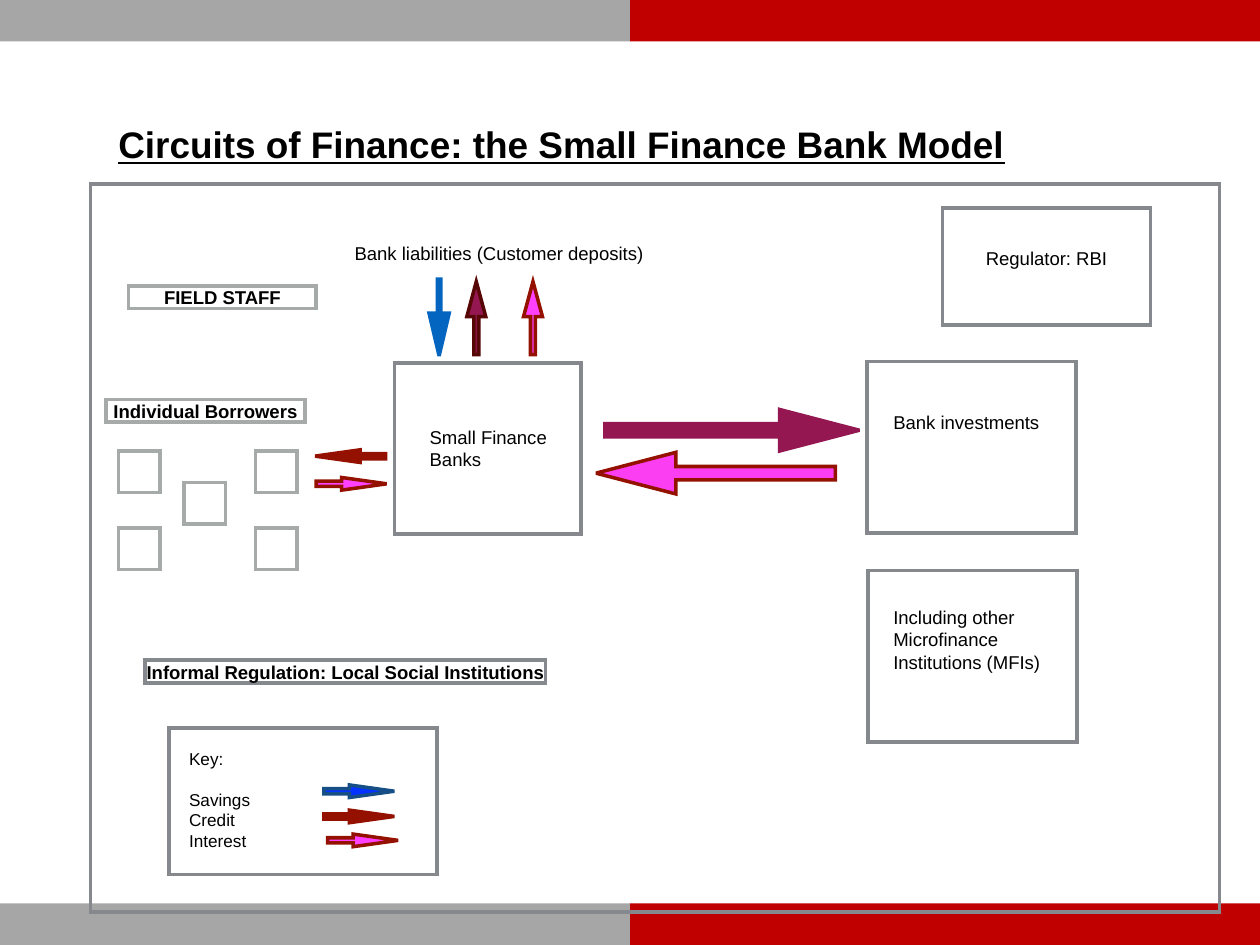
"""Build the Small Finance Bank circuits slide."""
import lxml.etree
import pptx
import pptx.util
import pptx.dml.color
import pptx.enum.shapes
import pptx.enum.text
import pptx.oxml.ns

Inches, Pt = pptx.util.Inches, pptx.util.Pt
KIND = pptx.enum.shapes.MSO_SHAPE
ALIGN = pptx.enum.text.PP_ALIGN
MID = pptx.enum.text.MSO_ANCHOR.MIDDLE
TOP = pptx.enum.text.MSO_ANCHOR.TOP

GREY, PALE, RED = "85888D", "A6AAA9", "C00000"
RUST, PLUM, PINK = "941100", "941751", "FF40FF"

BARS = [(x, y, hue) for y in (0, 7.17) for x, hue in ((5, RED), (0, "A6A6A6"))]

BOXES = [
    (0.72, 1.46, 8.96, 5.78),
    (3.13, 2.88, 1.48, 1.36),
    (6.88, 2.87, 1.66, 1.36),
    (6.89, 4.53, 1.66, 1.36),
    (7.48, 1.65, 1.65, 0.93),
    (1.34, 5.78, 2.13, 1.16),
]

SIDE = 0.33
HOMES = [(x, y) for x in (0.94, 2.03) for y in (3.58, 4.19)] + [(1.46, 3.83)]

LABELS = [
    ("FIELD STAFF", 1.02, 2.27, 1.49, PALE),
    ("Individual Borrowers", 0.84, 3.17, 1.58, PALE),
    ("Informal Regulation: Local Social Institutions", 1.15, 5.24, 3.18, GREY),
]

BODY = {"size": Pt(10.6)}
BOLD = {"size": Pt(10.6), "bold": True}
HEAD = {"size": Pt(21.1), "bold": True, "underline": True}
SMALL = {"size": Pt(9.8)}

TEXTS = [
    (["Circuits of Finance: the Small Finance Bank Model"],
     (0.76, 0.93, 7.4, 0.43), ALIGN.CENTER, MID, HEAD),
    (["Bank liabilities (Customer deposits)"],
     (2.71, 1.88, 2.5, 0.26), ALIGN.CENTER, MID, BODY),
    (["Regulator: RBI"], (7.47, 1.92, 1.67, 0.26), ALIGN.CENTER, MID, BODY),
    (["Small Finance Banks"], (3.37, 3.34, 1.19, 0.43), ALIGN.LEFT, MID, BODY),
    (["Bank investments"], (7.05, 3.22, 1.35, 0.25), ALIGN.LEFT, TOP, BODY),
    (["Including other Microfinance Institutions (MFIs)"],
     (7.05, 4.77, 1.44, 0.61), ALIGN.LEFT, MID, BODY),
    (["Key:", "Savings", "Credit", "Interest"],
     (1.46, 5.89, 1.49, 0.91), ALIGN.LEFT, MID, SMALL),
]

THIN, RISE, WIDE = (0.41, 3.57), (0.26, 1.85), (0.32, 1.92)
ARROWS = [
    ((3.18, 2.44, 0.61, 0.16), 90, (0.17, 2.12), "0365C0", "0365C0"),
    ((3.49, 2.45, 0.58, 0.15), 270, RISE, PLUM, "570706"),
    ((3.94, 2.45, 0.58, 0.15), 270, RISE, PINK, RUST),
    ((4.8, 3.25, 2.02, 0.33), 0, WIDE, PLUM, PLUM),
    ((4.73, 3.59, 1.9, 0.33), 180, WIDE, "FC3EF3", RUST),
    ((2.5, 3.57, 0.56, 0.1), 180, THIN, RUST, RUST),
    ((2.51, 3.79, 0.56, 0.1), 0, THIN, PINK, RUST),
    ((2.57, 6.23, 0.56, 0.1), 0, THIN, "0433FF", "164F86"),
    ((2.57, 6.43, 0.56, 0.1), 0, THIN, RUST, RUST),
    ((2.6, 6.62, 0.56, 0.1), 0, THIN, PINK, RUST),
]


def color(code):
    return pptx.dml.color.RGBColor.from_string(code)


def place(spot):
    return [Inches(v) for v in spot]


def draw(slide, spot, fill=None, line=None, kind=KIND.RECTANGLE):
    shape = slide.shapes.add_shape(kind, *place(spot))
    shape.shadow.inherit = False
    if fill:
        shape.fill.solid()
        shape.fill.fore_color.rgb = color(fill)
    else:
        shape.fill.background()
    if line:
        shape.line.color.rgb = color(line)
        shape.line.width = Pt(2)
        edge = shape.element.spPr.find(pptx.oxml.ns.qn("a:ln"))
        lxml.etree.SubElement(edge, pptx.oxml.ns.qn("a:miter"), lim="400000")
    else:
        shape.line.fill.background()
    return shape


def write(shape, lines, align, anchor, style, inset=0.04):
    frame = shape.text_frame
    frame.word_wrap = align != ALIGN.CENTER
    frame.vertical_anchor = anchor
    for side in ("left", "top", "right", "bottom"):
        setattr(frame, "margin_" + side, Inches(inset))
    frame.text = "\n".join(lines)
    for para in frame.paragraphs:
        para.alignment = align
        for name, value in {"name": "Arial", **style}.items():
            setattr(para.font, name, value)
        para.font.color.rgb = color("000000")
    if len(lines) > 1:
        frame.paragraphs[0].space_after = Pt(11.5)


def main():
    deck = pptx.Presentation()
    deck.slide_width, deck.slide_height = Inches(10), Inches(7.5)
    slide = deck.slides.add_slide(deck.slide_layouts[6])
    for x, y, hue in BARS:
        draw(slide, (x, y, 5, 0.33), fill=hue)
    for spot in BOXES:
        draw(slide, spot, line=GREY)
    for x, y in HOMES:
        draw(slide, (x, y, SIDE, SIDE), line=PALE)
    for text, x, y, width, hue in LABELS:
        box = draw(slide, (x, y, width, 0.18), line=hue)
        write(box, [text], ALIGN.CENTER, MID, BOLD, 0)
    for lines, spot, align, anchor, style in TEXTS:
        box = slide.shapes.add_textbox(*place(spot))
        write(box, lines, align, anchor, style)
    for spot, turn, bends, fill, line in ARROWS:
        arrow = draw(slide, spot, fill, line, KIND.RIGHT_ARROW)
        arrow.rotation = turn
        for i, bend in enumerate(bends):
            arrow.adjustments[i] = bend
    deck.save("out.pptx")


if __name__ == "__main__":
    main()
